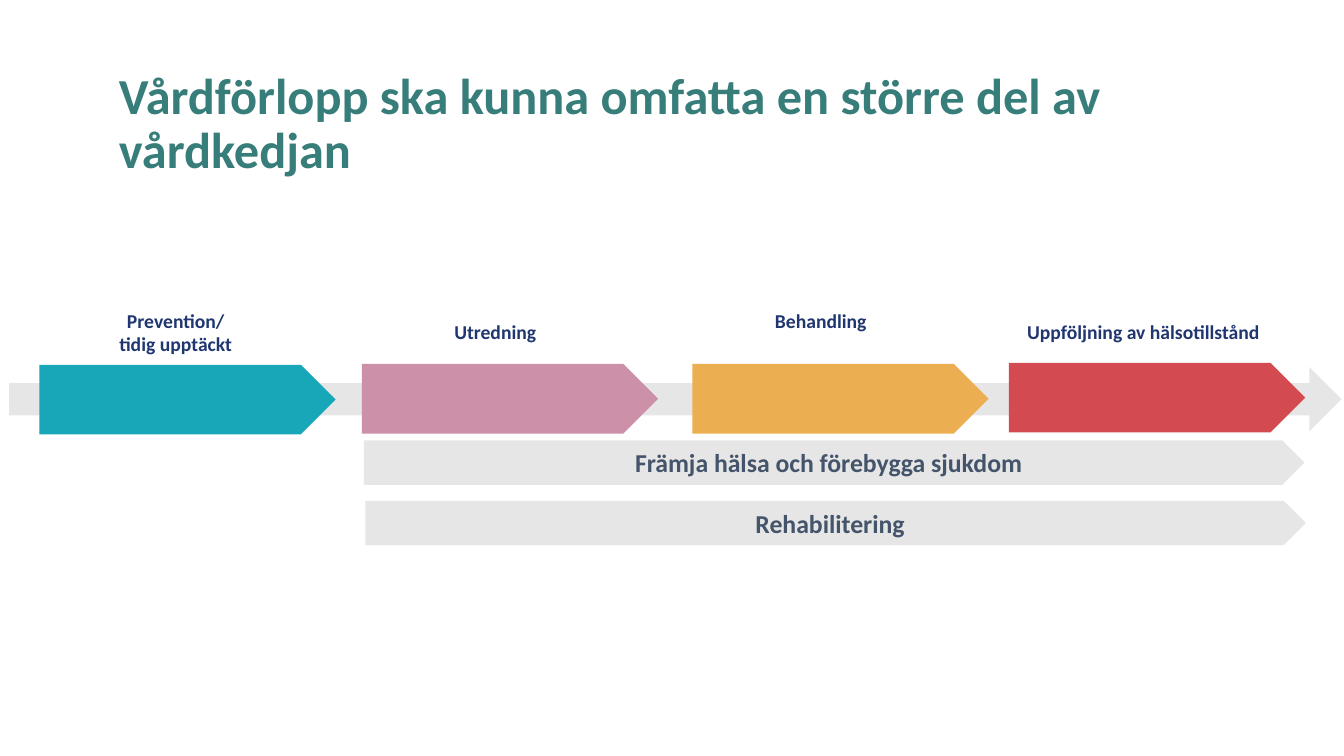
from pptx import Presentation
from pptx.dml.color import RGBColor
from pptx.enum.shapes import MSO_SHAPE
from pptx.enum.text import MSO_ANCHOR, PP_ALIGN
from pptx.util import Pt

ARROW, PLATE = MSO_SHAPE.RIGHT_ARROW, MSO_SHAPE.PENTAGON
MIDDLE, BOTTOM = MSO_ANCHOR.MIDDLE, MSO_ANCHOR.BOTTOM
CENTER, LEFT = PP_ALIGN.CENTER, PP_ALIGN.LEFT

COLORS = {
    "title": "377D7A", "label": "203670", "text": "44546A", "grey": "E7E6E6",
    "teal": "18A7B8", "pink": "CC91A9", "amber": "EBAE51", "red": "D34B50",
}

deck = Presentation()
deck.slide_width, deck.slide_height = Pt(960), Pt(540)
slide = deck.slides.add_slide(deck.slide_layouts[6])


def add_block(kind, left, top, width, height, fill=None):
    block = slide.shapes.add_shape(kind, Pt(left), Pt(top), Pt(width), Pt(height))
    block.shadow.inherit = False
    block.line.fill.background()
    if fill:
        block.fill.solid()
        block.fill.fore_color.rgb = RGBColor.from_string(COLORS[fill])
    else:
        block.fill.background()
    return block


def set_text(shape, text, size, color, align=CENTER, anchor=MIDDLE):
    frame = shape.text_frame
    frame.word_wrap = True
    frame.vertical_anchor = anchor
    frame.text = text
    for para in frame.paragraphs:
        para.alignment = align
        for run in para.runs:
            run.font.name = "Calibri"
            run.font.size = Pt(size)
            run.font.bold = True
            run.font.color.rgb = RGBColor.from_string(COLORS[color])


# Title
title = slide.shapes.add_textbox(Pt(77.8), Pt(83.5), Pt(882), Pt(48.2))
set_text(title, "Vårdförlopp ska kunna omfatta en större del av vårdkedjan",
         36, "title", LEFT, BOTTOM)
title.text_frame.paragraphs[0].line_spacing = 0.9

# Long arrow behind the steps
add_block(ARROW, 6.5, 262.1, 951.8, 46.1, "grey")

# Steps of the care chain: label, its left and lift, then plate left, top, fill
steps = [
    ("Prevention/\ntidig upptäckt", 25.9, 0, 28.1, 260.6, "teal"),
    ("Utredning", 254.2, 0, 258.5, 260, "pink"),
    ("Behandling", 486.7, 17, 494.6, 260, "amber"),
    ("Uppföljning av hälsotillstånd", 717.1, 0, 720.7, 259.2, "red"),
]
for text, left, lift, start, top, fill in steps:
    label = add_block(PLATE, left, 212.4, 211.7, 49.7)
    set_text(label, text, 14, "label")
    label.text_frame.margin_bottom = Pt(3.6 + lift)
    add_block(PLATE, start, top, 211.7, 49.7, fill)

# Bars that span the later steps
bars = [("Främja hälsa och förebygga sjukdom", 260), ("Rehabilitering", 261)]
for row, (text, left) in enumerate(bars):
    bar = add_block(PLATE, left, 314.6 + 43.2 * row, 671.8, 31.7, "grey")
    set_text(bar, text, 18.4, "text")

deck.save("out.pptx")
